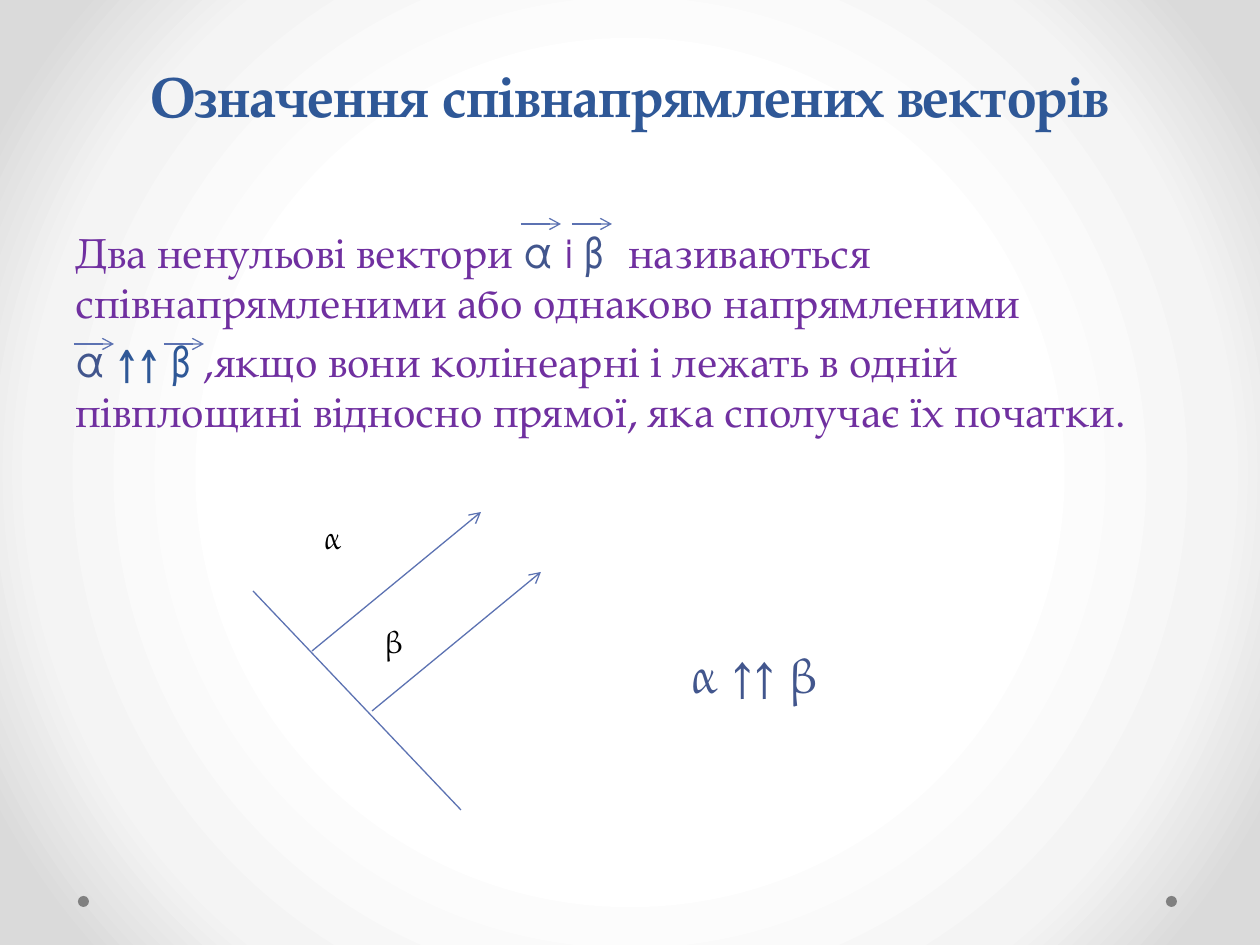
from dataclasses import dataclass

from lxml import etree
from pptx import Presentation
from pptx.dml.color import RGBColor
from pptx.enum.shapes import MSO_CONNECTOR, MSO_SHAPE
from pptx.enum.text import MSO_ANCHOR, MSO_AUTO_SIZE, PP_ALIGN
from pptx.oxml.ns import qn
from pptx.util import Emu, Pt

LINE, OVAL = MSO_CONNECTOR.STRAIGHT, MSO_SHAPE.OVAL
BOTTOM, CENTER = MSO_ANCHOR.BOTTOM, PP_ALIGN.CENTER
GROW = MSO_AUTO_SIZE.SHAPE_TO_FIT_TEXT
SCALE = 914400 / 126
SERIF, SANS = "TeX Gyre Pagella", "TeX Gyre Adventor"
BLUE, SLATE, PURPLE = "2F5897", "42568D", "7030A0"
BLACK, STROKE, GREY = "000000", "5C72B2", "808080"


@dataclass
class Run:
    text: str
    color: str
    font: str = SERIF
    size: int = 24
    bold: bool = False
    gap: int = 0


@dataclass
class Box:
    left: int
    top: int
    width: int
    height: int
    paras: list[list[Run]]
    wrap: bool = False


@dataclass
class Stroke:
    x1: int
    y1: int
    x2: int
    y2: int
    arrow: bool = True


TITLE = Box(63, 0, 1134, 135, [
    [Run("Означення співнапрямлених векторів", BLUE, size=32, bold=True)],
], wrap=True)
BODY = Box(63, 220, 1134, 624, [
    [
        Run("Два ненульові вектори ", PURPLE),
        Run("α ", SLATE, SANS),
        Run("і ", PURPLE, SANS),
        Run("β", SLATE, SANS),
        Run(" ", SLATE, SANS, gap=665),
        Run("називаються співнапрямленими або однаково напрямленими", PURPLE),
    ],
    [
        Run("α ", SLATE, SANS),
        Run("↑↑ β ", BLUE, SANS),
        Run(",якщо вони колінеарні і лежать в одній півплощині відносно "
            "прямої, яка сполучає їх початки.", PURPLE),
    ],
], wrap=True)
LABELS = [
    Box(312, 512, 45, 50, [[Run("α", BLACK, size=18)]]),
    Box(372, 616, 44, 50, [[Run("β", BLACK, size=18)]]),
    Box(679, 638, 160, 72, [[Run("α ↑↑ β", SLATE, size=28)]]),
]
MARKS = [(521, 224), (572, 224), (74, 344), (164, 344)]
STROKES = [Stroke(x, y, x + 40, y) for x, y in MARKS] + [
    Stroke(253, 591, 461, 810, arrow=False),
    Stroke(312, 651, 481, 512),
    Stroke(372, 711, 541, 572),
]
STOPS = [(50, "FFFFFF"), (76, "F4F4F4"), (92, "DADADA")]


def px(value: int) -> Emu:
    """Turn pixels into EMU."""
    return Emu(round(value * SCALE))


def rgb(color: str) -> RGBColor:
    """Turn a hex string into a colour."""
    return RGBColor.from_string(color)


def paint(slide) -> None:
    """Fill the background with a round gradient."""
    slide.background.fill.gradient()
    grad = slide.element.find(".//" + qn("a:gradFill"))
    for child in list(grad):
        grad.remove(child)
    stops = etree.SubElement(grad, qn("a:gsLst"))
    for pos, color in STOPS:
        stop = etree.SubElement(stops, qn("a:gs"), pos=str(pos * 1000))
        etree.SubElement(stop, qn("a:srgbClr"), val=color)
    shade = etree.SubElement(grad, qn("a:path"), {"path": "circle"})
    etree.SubElement(shade, qn("a:fillToRect"), dict.fromkeys("ltrb", "50000"))


def add_dot(slide, left: int) -> None:
    """Draw a small footer dot."""
    dot = slide.shapes.add_shape(OVAL, px(left), px(896), px(11), px(11))
    dot.shadow.inherit = False
    dot.fill.solid()
    dot.fill.fore_color.rgb = rgb(GREY)
    dot.line.fill.background()


def add_run(para, item: Run) -> None:
    """Append one styled run to a paragraph."""
    run = para.add_run()
    run.text = item.text
    font = run.font
    font.name, font.size, font.bold = item.font, Pt(item.size), item.bold
    font.color.rgb = rgb(item.color)
    if item.gap:
        para.runs[-1]._r.get_or_add_rPr().set("spc", str(item.gap))


def add_text(slide, box: Box):
    """Draw a text box and return its frame."""
    shape = slide.shapes.add_textbox(
        px(box.left), px(box.top), px(box.width), px(box.height))
    frame = shape.text_frame
    frame.word_wrap = box.wrap
    if not box.wrap:
        frame.auto_size = GROW
    for i, runs in enumerate(box.paras):
        para = frame.add_paragraph() if i else frame.paragraphs[0]
        if i:
            para.space_before = Pt(4.8)
        for item in runs:
            add_run(para, item)
    return frame


def add_stroke(slide, item: Stroke) -> None:
    """Draw a line, with an arrowhead if asked."""
    line = slide.shapes.add_connector(
        LINE, px(item.x1), px(item.y1), px(item.x2), px(item.y2))
    line.line.width = Pt(0.75)
    line.line.color.rgb = rgb(STROKE)
    props = line.element.spPr
    if item.arrow:
        etree.SubElement(props.find(qn("a:ln")), qn("a:tailEnd"), type="arrow")
    etree.SubElement(props, qn("a:effectLst"))


def main() -> None:
    """Build and save the slide."""
    deck = Presentation()
    deck.slide_width, deck.slide_height = px(1260), px(945)
    slide = deck.slides.add_slide(deck.slide_layouts[6])
    paint(slide)
    for left in (1166, 78):
        add_dot(slide, left)
    title = add_text(slide, TITLE)
    title.vertical_anchor = BOTTOM
    head = title.paragraphs[0]
    head.alignment, head.line_spacing = CENTER, Pt(58)
    add_text(slide, BODY)
    for item in STROKES:
        add_stroke(slide, item)
    for box in LABELS:
        add_text(slide, box)
    deck.save("out.pptx")


if __name__ == "__main__":
    main()
